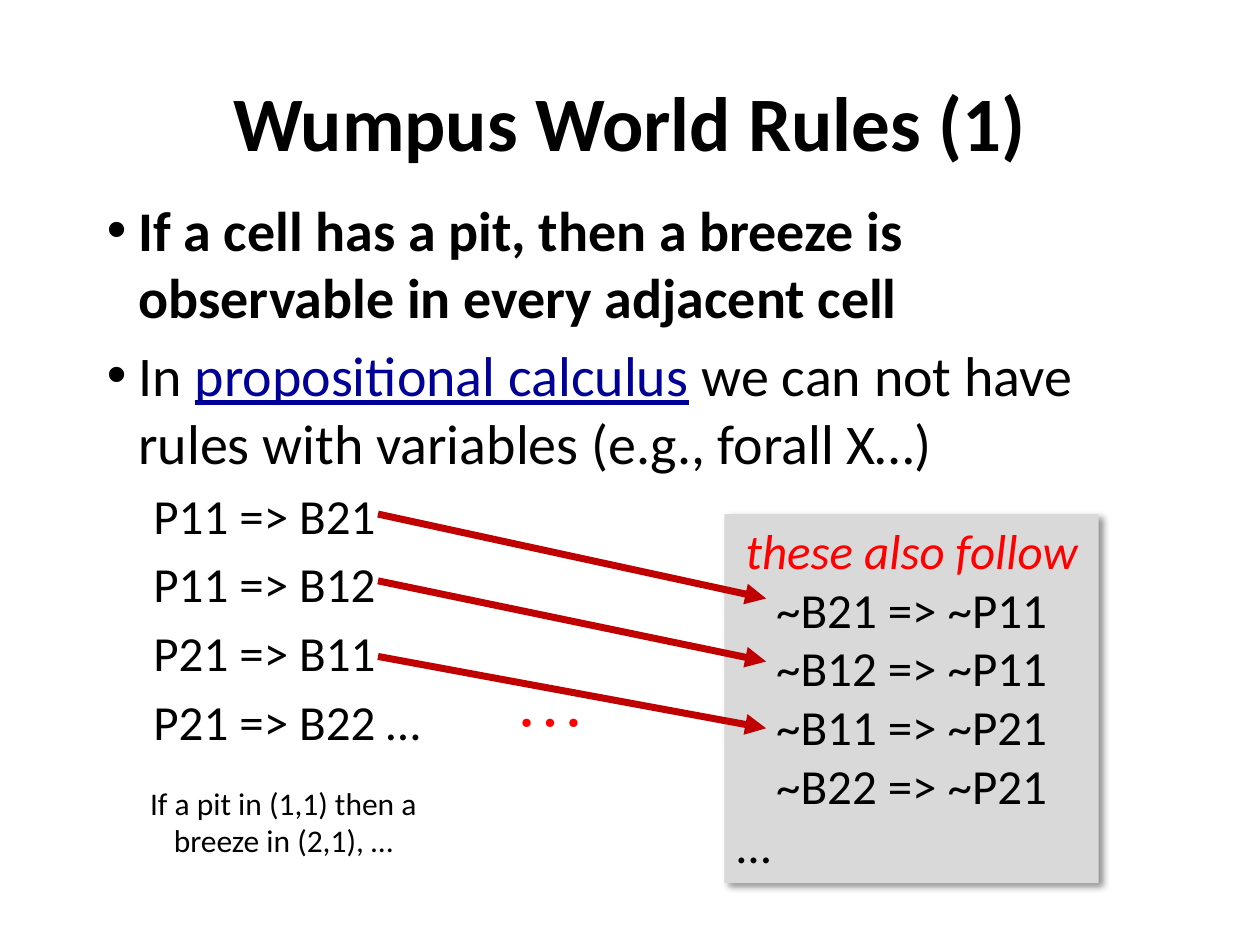
from lxml.etree import SubElement
from pptx import Presentation
from pptx.dml.color import RGBColor
from pptx.enum.shapes import MSO_CONNECTOR, MSO_SHAPE
from pptx.enum.text import MSO_ANCHOR, PP_ALIGN
from pptx.oxml.ns import qn
from pptx.util import Inches, Pt

BLACK = RGBColor(0x00, 0x00, 0x00)
NAVY = RGBColor(0x00, 0x00, 0x99)
RED = RGBColor(0xFF, 0x00, 0x00)
DARK_RED = RGBColor(0xC0, 0x00, 0x00)
GRAY = RGBColor(0xD9, 0xD9, 0xD9)

RULES = ["P11 => B21", "P11 => B12", "P21 => B11", "P21 => B22 …"]
CONVERSES = ["~B21 => ~P11", "~B12 => ~P11", "~B11 => ~P21", "~B22 => ~P21"]
ARROW_ENDS = [(4.08, 4.75), (4.61, 5.25), (5.21, 5.78)]


def add_run(p, text, size, color=BLACK, **formats):
    """Append a run with the given font formats."""
    r = p.add_run()
    r.text = text
    for name, value in {"name": "Calibri", "size": Pt(size), **formats}.items():
        setattr(r.font, name, value)
    r.font.color.rgb = color


def next_paragraph(tf):
    """Return the first paragraph while it is empty, otherwise a new one."""
    p = tf.paragraphs[0]
    return tf.add_paragraph() if p.runs else p


def add_box(slide, box, wrap=True):
    """Add a text box and return its text frame."""
    tf = slide.shapes.add_textbox(*map(Inches, box)).text_frame
    tf.word_wrap = wrap
    return tf


def add_item(tf, runs, size, indent, bullet=None):
    """Add an indented body paragraph, hanging from its bullet if it has one."""
    p = next_paragraph(tf)
    p.space_before = Pt(size * 0.2)
    pPr = p._p.get_or_add_pPr()
    pPr.set("marL", str(Inches(indent)))
    pPr.set("indent", str(-Inches(indent) if bullet else 0))
    if bullet:
        SubElement(pPr, qn("a:buFont"), typeface="Arial")
        SubElement(pPr, qn("a:buChar"), char=bullet)
    for text, formats in runs:
        add_run(p, text, size, **formats)


def set_title(slide, box, text):
    """Place and format the title placeholder."""
    sp = slide.shapes.title
    sp.left, sp.top, sp.width, sp.height = map(Inches, box)
    tf = sp.text_frame
    tf.vertical_anchor = MSO_ANCHOR.MIDDLE
    p = tf.paragraphs[0]
    p.alignment = PP_ALIGN.CENTER
    add_run(p, text, 44, bold=True)


def add_body(slide, box):
    """Write the bulleted statements and the rules below them."""
    tf = add_box(slide, box)
    statement = "If a cell has a pit, then a breeze is observable in every adjacent cell"
    add_item(tf, [(statement, {"bold": True})], 32, 0.25, "•")
    add_item(tf, [
        ("In ", {}),
        ("propositional calculus", {"color": NAVY, "underline": True}),
        (" we can not have rules with variables (e.g., forall X…)", {}),
    ], 32, 0.25, "•")
    for rule in RULES:
        add_item(tf, [(rule, {})], 28, 0.37)


def add_note(slide, box):
    """Write the reading of the first rule."""
    p = add_box(slide, box).paragraphs[0]
    p.alignment = PP_ALIGN.CENTER
    add_run(p, "If a pit in (1,1) then a breeze in (2,1), …", 18)


def add_shadow(sp):
    """Give a shape a soft shadow to its lower right."""
    sp.shadow.inherit = False
    effects = sp._element.spPr.find(qn("a:effectLst"))
    shadow = SubElement(effects, qn("a:outerShdw"), blurRad=str(Pt(4)),
                        dist=str(Pt(3)), dir=str(45 * 60000), algn="tl", rotWithShape="0")
    color = SubElement(shadow, qn("a:srgbClr"), val=str(BLACK))
    SubElement(color, qn("a:alpha"), val="43000")


def add_converse_panel(slide, box):
    """Draw the gray panel with the rules that also follow."""
    sp = slide.shapes.add_shape(MSO_SHAPE.RECTANGLE, *map(Inches, box))
    sp.fill.solid()
    sp.fill.fore_color.rgb = GRAY
    sp.line.fill.background()
    add_shadow(sp)
    tf = sp.text_frame
    tf.word_wrap = False
    tf.vertical_anchor = MSO_ANCHOR.TOP
    lines = [("these also follow", {"color": RED, "italic": True})]
    lines += [(rule, {}) for rule in CONVERSES]
    for text, formats in lines:
        p = next_paragraph(tf)
        p.alignment = PP_ALIGN.CENTER
        add_run(p, text, 28, **formats)
    p = tf.add_paragraph()
    p.alignment = PP_ALIGN.LEFT
    add_run(p, "…", 28)


def add_arrows(slide, left, right):
    """Link each rule to its converse."""
    for start, end in ARROW_ENDS:
        points = map(Inches, (left, start, right, end))
        line = slide.shapes.add_connector(MSO_CONNECTOR.STRAIGHT, *points)
        line.line.color.rgb = DARK_RED
        line.line.width = Pt(4)
        SubElement(line.line._get_or_add_ln(), qn("a:tailEnd"), type="triangle")
        SubElement(line._element.spPr, qn("a:effectLst"))


def add_ellipsis(slide, box):
    """Mark that the arrows continue."""
    p = add_box(slide, box, wrap=False).paragraphs[0]
    add_run(p, "…", 40, RED, name="Times New Roman")


def main():
    """Build the slide and save it."""
    prs = Presentation()
    prs.slide_width, prs.slide_height = Inches(10), Inches(7.5)
    slide = prs.slides.add_slide(prs.slide_layouts[5])
    set_title(slide, (0.75, 0.33, 8.5, 1.25), "Wumpus World Rules (1)")
    add_body(slide, (0.75, 1.5, 8.5, 5.67))
    add_note(slide, (1, 6.17, 2.5, 0.71))
    add_converse_panel(slide, (5.75, 4.08, 2.97, 2.93))
    add_arrows(slide, 3, 6.08)
    add_ellipsis(slide, (3.99, 5.16, 0.76, 0.77))
    prs.save("out.pptx")


if __name__ == "__main__":
    main()
